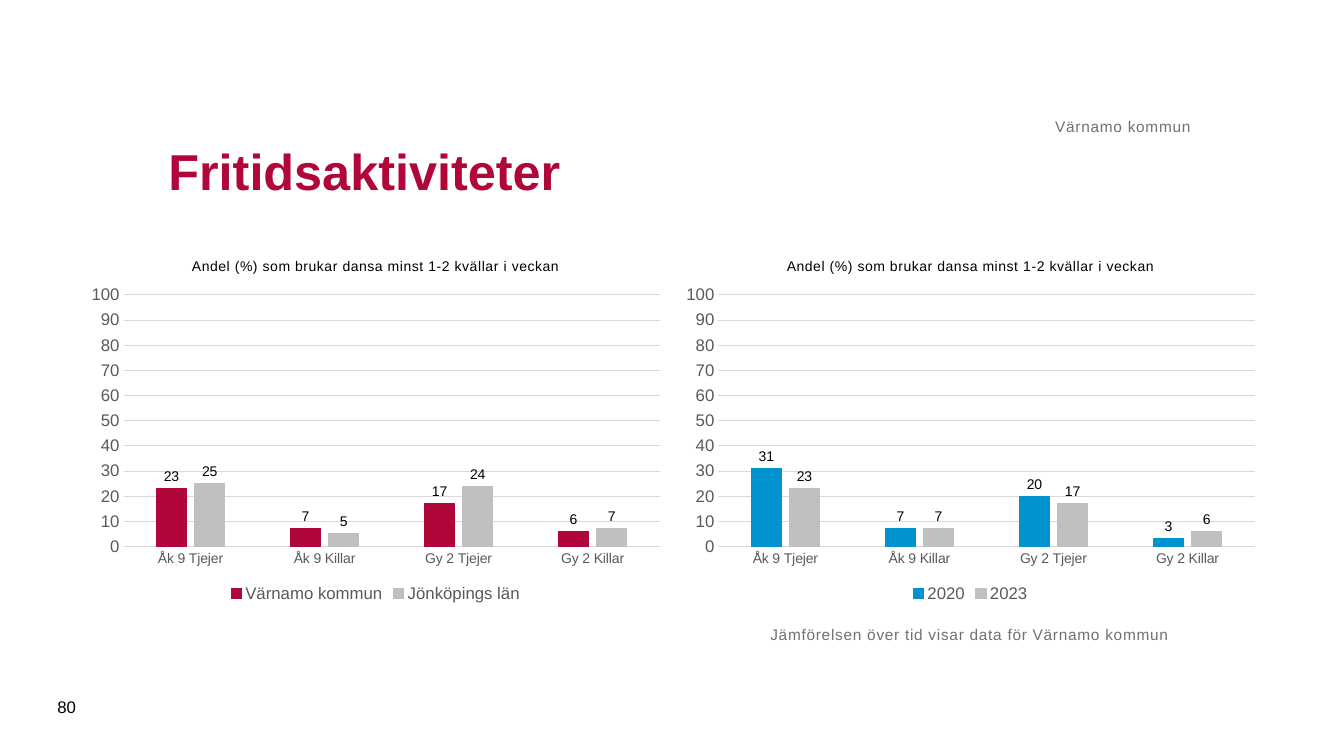
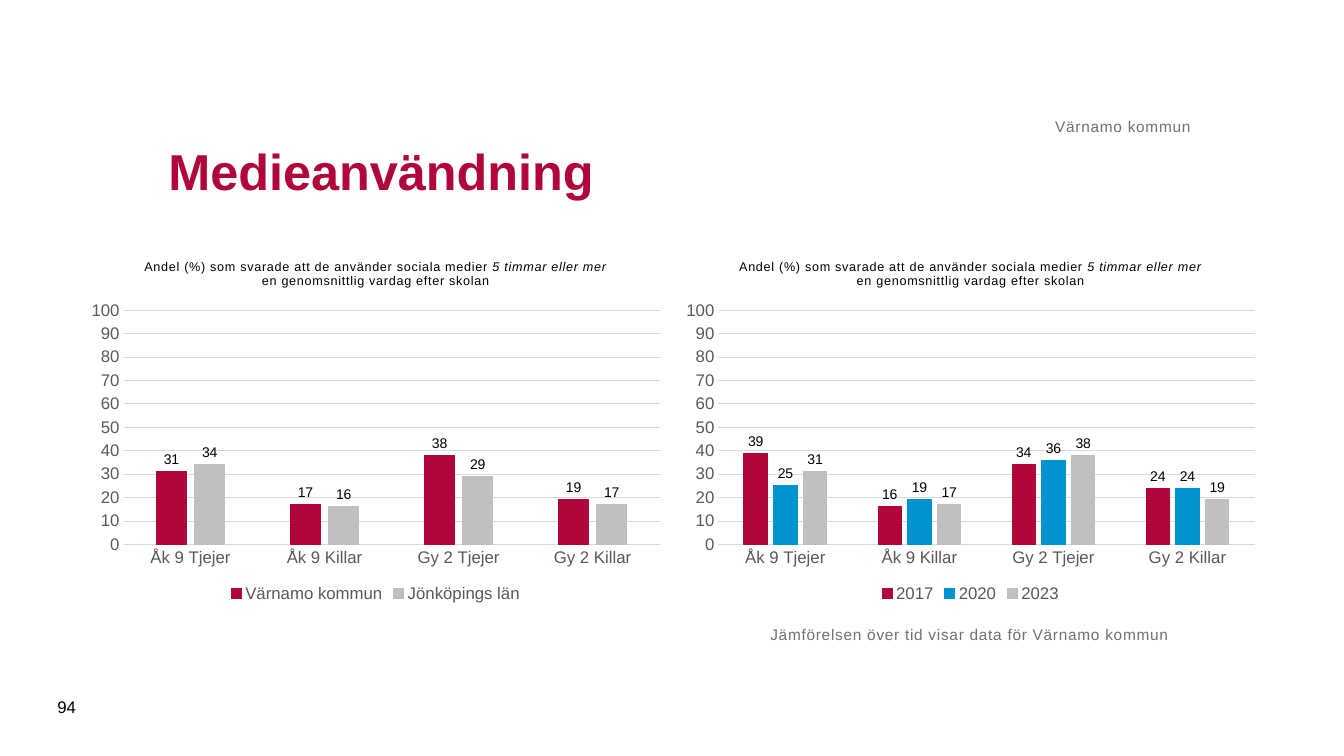
from dataclasses import dataclass

from pptx import Presentation
from pptx import util as u
from pptx.chart.data import CategoryChartData
from pptx.dml.color import RGBColor
from pptx.enum import chart as ch, text as tx


@dataclass(frozen=True)
class Theme:
    face: str = "Arial"
    red: str = "B1063A"
    blue: str = "0093D0"
    silver: str = "BFBFBF"
    grid: str = "D9D9D9"
    axis: str = "595959"
    note: str = "717171"
    black: str = "000000"
    head: int = 36
    body: int = 12
    small: int = 11
    label: int = 10
    tiny: int = 9
    space: str = "50"


T = Theme()
FORM = "#,##0;#,##0"
CATS = ("Åk 9 Tjejer", "Åk 9 Killar", "Gy 2 Tjejer", "Gy 2 Killar")
TOWN, COUNTY = "Värnamo kommun", "Jönköpings län"
LEFT, STEP = 0.79, 5.9


def style(font, size, color, bold=False, slant=False):
    font.name = T.face
    font.size = u.Pt(size)
    font.bold = bold
    font.italic = slant
    font.color.rgb = RGBColor.from_string(color)


def add_run(para, words, size, color, spaced=False, **look):
    run = para.add_run()
    run.text = words
    style(run.font, size, color, **look)
    if spaced:
        run.font._element.set("spc", T.space)


def add_text(slide, box, words, size, color, spaced=False, inset=None,
             anchor=tx.MSO_ANCHOR.TOP, align=tx.PP_ALIGN.LEFT):
    frame = slide.shapes.add_textbox(*map(u.Inches, box)).text_frame
    frame.word_wrap = True
    frame.vertical_anchor = anchor
    if inset is not None:
        frame.margin_left = frame.margin_right = u.Inches(inset)
        frame.margin_top = frame.margin_bottom = u.Inches(inset)
    para = frame.paragraphs[0]
    para.alignment = align
    add_run(para, words, size, color, spaced)


def add_title(slide, words):
    title = slide.shapes.title
    title.left, title.top = u.Inches(1.57), u.Inches(0.98)
    title.width, title.height = u.Inches(10.24), u.Inches(1.42)
    frame = title.text_frame
    frame.vertical_anchor = tx.MSO_ANCHOR.MIDDLE
    para = frame.paragraphs[0]
    para.alignment = tx.PP_ALIGN.LEFT
    add_run(para, words, T.head, T.red, bold=True)


def set_line(line, color):
    line.color.rgb = RGBColor.from_string(color)
    line.width = u.Pt(0.75)


def set_axes(chart, size):
    cat, val = chart.category_axis, chart.value_axis
    for axis, points in ((cat, size), (val, T.body)):
        axis.major_tick_mark = axis.minor_tick_mark = ch.XL_TICK_MARK.NONE
        style(axis.tick_labels.font, points, T.axis)
    set_line(cat.format.line, T.grid)
    val.minimum_scale, val.maximum_scale = 0, 100
    val.major_unit = 10
    val.tick_labels.number_format = FORM
    val.tick_labels.number_format_is_linked = False
    val.format.line.fill.background()
    val.has_major_gridlines = True
    set_line(val.major_gridlines.format.line, T.grid)


def set_bars(plot, colors):
    plot.gap_width, plot.overlap = 219, -27
    plot.vary_by_categories = False
    for bar, color in zip(plot.series, colors):
        bar.invert_if_negative = False
        bar.format.fill.solid()
        bar.format.fill.fore_color.rgb = RGBColor.from_string(color)
        set_line(bar.format.line, color)
        labels = bar.data_labels
        labels.show_value = True
        labels.position = ch.XL_LABEL_POSITION.OUTSIDE_END
        labels.number_format = FORM
        labels.number_format_is_linked = False
        style(labels.font, T.label, T.black)


def add_bars(slide, left, head, rows, head_size, cat_size):
    data = CategoryChartData(number_format=FORM)
    data.categories = CATS
    for name, vals, _ in rows:
        data.add_series(name, vals)
    box = map(u.Inches, (left, 2.4, 5.87, 3.62))
    chart = slide.shapes.add_chart(
        ch.XL_CHART_TYPE.COLUMN_CLUSTERED, *box, data).chart
    style(chart.font, T.label, T.black)
    chart.has_title = True
    chart.chart_title.include_in_layout = False
    para = chart.chart_title.text_frame.paragraphs[0]
    for words, slant in head:
        add_run(para, words, head_size, T.black, True, slant=slant)
    chart.has_legend = True
    chart.legend.position = ch.XL_LEGEND_POSITION.BOTTOM
    chart.legend.include_in_layout = False
    style(chart.legend.font, T.body, T.axis)
    set_axes(chart, cat_size)
    set_bars(chart.plots[0], [color for *_, color in rows])


def add_page(deck, title, number, head, charts, head_size, cat_size):
    slide = deck.slides.add_slide(deck.slide_layouts[5])
    for col, rows in enumerate(charts):
        add_bars(slide, LEFT + col * STEP, head, rows, head_size, cat_size)
    add_title(slide, title)
    add_text(slide, (1.57, 0.62, 10.24, 0.73), TOWN, T.small, T.note, True, 0,
             tx.MSO_ANCHOR.BOTTOM, tx.PP_ALIGN.RIGHT)
    add_text(slide, (7.64, 6.2, 5.31, 0.94),
             f"Jämförelsen över tid visar data för {TOWN}",
             T.small, T.note, True, 0)
    add_text(slide, (0.47, 6.81, 0.57, 0.4), number, T.body, T.black,
             anchor=tx.MSO_ANCHOR.MIDDLE)


def main():
    deck = Presentation()
    deck.slide_width, deck.slide_height = u.Inches(13.33), u.Inches(7.5)
    dance = (23, 7, 17, 6)
    media = (31, 17, 38, 19)
    add_page(
        deck, "Fritidsaktiviteter", "80",
        [("Andel (%) som brukar dansa minst 1-2 kvällar i veckan", False)],
        [[(TOWN, dance, T.red), (COUNTY, (25, 5, 24, 7), T.silver)],
         [("2020", (31, 7, 20, 3), T.blue), ("2023", dance, T.silver)]],
        T.label, T.label)
    add_page(
        deck, "Medieanvändning", "94",
        [("Andel (%) som svarade att de använder sociala medier ", False),
         ("5 timmar eller mer", True),
         (" en genomsnittlig vardag efter skolan", False)],
        [[(TOWN, media, T.red), (COUNTY, (34, 16, 29, 17), T.silver)],
         [("2017", (39, 16, 34, 24), T.red),
          ("2020", (25, 19, 36, 24), T.blue),
          ("2023", media, T.silver)]],
        T.tiny, T.body)
    deck.save("out.pptx")


if __name__ == "__main__":
    main()
